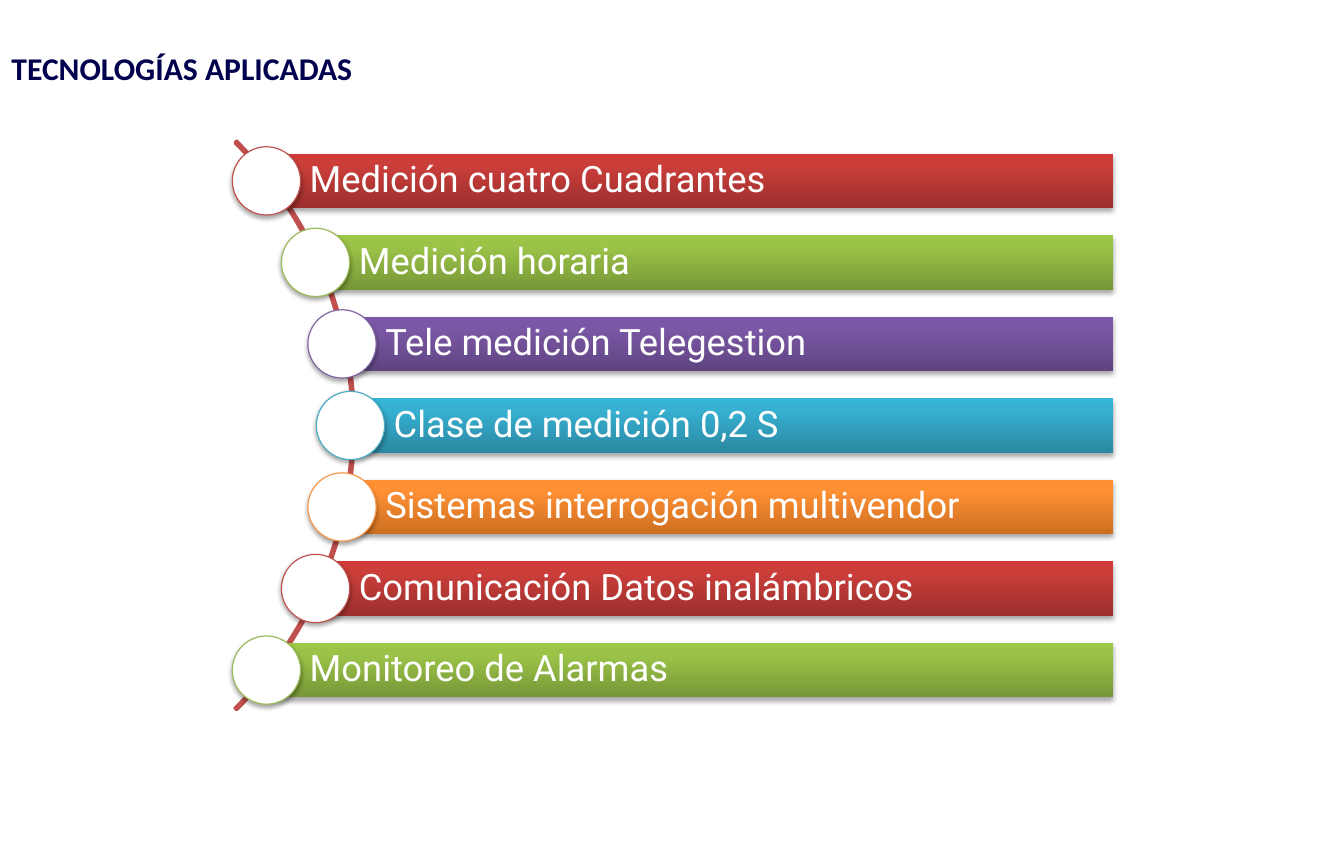
import copy
import math

import pptx
import pptx.dml.color
import pptx.enum.shapes
import pptx.enum.text
import pptx.oxml
import pptx.oxml.ns
import pptx.util

Inches = pptx.util.Inches
Pt = pptx.util.Pt
SHAPE = pptx.enum.shapes.MSO_SHAPE
ALIGN = pptx.enum.text.PP_ALIGN
MIDDLE = pptx.enum.text.MSO_ANCHOR.MIDDLE

TITLE = "TECNOLOGÍAS APLICADAS"
ITEMS = [
    "Medición cuatro Cuadrantes",
    "Medición horaria",
    "Tele medición Telegestion",
    "Clase de medición 0,2 S",
    "Sistemas interrogación multivendor",
    "Comunicación Datos inalámbricos",
    "Monitoreo de Alarmas",
]
# Ring colour, then bar gradient from bottom to top
THEMES = [
    ("C0504D", ("9C2F2D", "CB3E3A", "CE3B37")),
    ("9BBB59", ("779737", "9BC348", "9DC746")),
    ("8064A2", ("5F4480", "7B58A6", "7C57A8")),
    ("4BACC6", ("2A88A2", "37B1D2", "34B4D6")),
    ("F79646", ("CC6E20", "FF9034", "FF9136")),
]
STOPS = (0, 0.8, 1)

MID_X, MID_Y = -0.42, 3.74  # centre of the arc
ARC = 7.07                  # diameter of the arc
REACH = 3.5                 # distance from arc centre to ring centres
PITCH = 4.3 / 6
BAR_H, BAR_END = 0.48, 9.78
RING = 0.6

SHADOW = (
    '<a:outerShdw %s blurRad="%d" dist="%d" dir="5400000" rotWithShape="0">'
    '<a:srgbClr val="000000"><a:alpha val="35000"/></a:srgbClr></a:outerShdw>'
    % (pptx.oxml.ns.nsdecls("a"), Pt(3.1), Pt(1.8))
)


def color(code):
    return pptx.dml.color.RGBColor.from_string(code)


def add(kind, x, y, w, h):
    shape = slide.shapes.add_shape(kind, Inches(x), Inches(y), Inches(w), Inches(h))
    shape.shadow.inherit = False
    return shape


def outline(shape, code, width):
    shape.line.color.rgb = color(code)
    shape.line.width = Pt(width)


def shade(shape):
    """Give the shape a soft drop shadow."""
    effects = shape._element.spPr.find(pptx.oxml.ns.qn("a:effectLst"))
    effects.append(pptx.oxml.parse_xml(SHADOW))


def blend(shape, codes):
    """Fill the shape with a three-stop gradient, bottom to top."""
    shape.fill.gradient()
    shape.fill.gradient_angle = 90
    stops = next(shape._element.spPr.iter(pptx.oxml.ns.qn("a:gsLst")))
    stops.append(copy.deepcopy(stops[-1]))
    for stop, place, code in zip(shape.fill.gradient_stops, STOPS, codes):
        stop.position = place
        stop.color.rgb = color(code)


def write(shape, text, font, size, code, bold=False):
    frame = shape.text_frame
    frame.text = text
    frame.word_wrap = True
    frame.vertical_anchor = MIDDLE
    para = frame.paragraphs[0]
    para.alignment = ALIGN.LEFT
    para.font.name = font
    para.font.size = Pt(size)
    para.font.bold = bold
    para.font.color.rgb = color(code)
    return frame


def add_row(x, y, text, ring_code, codes):
    """Draw a bar and its ring, both starting from the ring centre."""
    bar = add(SHAPE.RECTANGLE, x, y - BAR_H / 2, BAR_END - x, BAR_H)
    blend(bar, codes)
    bar.line.fill.background()
    shade(bar)
    frame = write(bar, text, "Roboto", 23, "FFFFFF")
    frame.paragraphs[0].line_spacing = 0.9
    frame.margin_left = Inches(0.38)
    frame.margin_top = frame.margin_right = frame.margin_bottom = Inches(0.06)

    ring = add(SHAPE.OVAL, x - RING / 2, y - RING / 2, RING, RING)
    ring.fill.solid()
    ring.fill.fore_color.rgb = color("FFFFFF")
    outline(ring, ring_code, 0.75)
    shade(ring)


deck = pptx.Presentation()
deck.slide_width, deck.slide_height = Inches(11.81), Inches(7.48)
slide = deck.slides.add_slide(deck.slide_layouts[5])

title = slide.shapes.title
title.left, title.top = Inches(0), Inches(0.01)
title.width, title.height = Inches(8.56), Inches(1.17)
write(title, TITLE, "Calibri", 20, "00004C", True)

arc = add(SHAPE.BLOCK_ARC, MID_X - ARC / 2, MID_Y - ARC / 2, ARC, ARC)
for i, value in enumerate((189, 27, 0.003)):
    arc.adjustments[i] = value
arc.fill.background()
outline(arc, THEMES[0][0], 2)

for i, item in enumerate(ITEMS):
    drop = (i - len(ITEMS) // 2) * PITCH
    x = MID_X + math.sqrt(REACH ** 2 - drop ** 2)
    add_row(x, MID_Y + drop, item, *THEMES[i % len(THEMES)])

deck.save("out.pptx")
